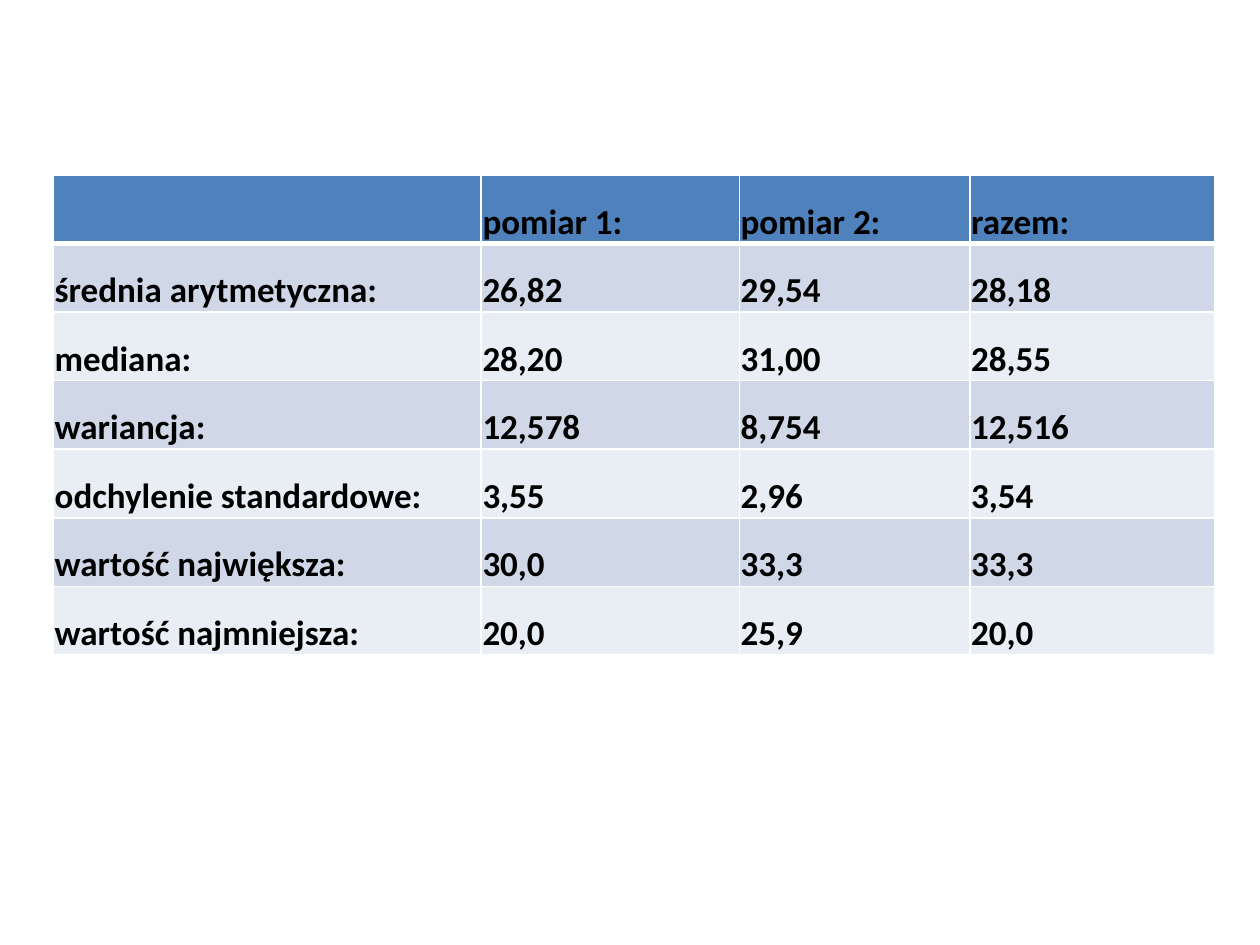
from lxml import etree
from pptx import Presentation
from pptx import util as u
from pptx.dml.color import RGBColor
from pptx.enum import text
from pptx.oxml.ns import qn

COLORS = {
    "header": "4F81BD",
    "odd": "D0D8E8",
    "even": "E9EDF4",
    "border": "FFFFFF",
    "text": "000000",
}

ROWS = [
    ["", "pomiar 1:", "pomiar 2:", "razem:"],
    ["średnia arytmetyczna:", "26,82", "29,54", "28,18"],
    ["mediana:", "28,20", "31,00", "28,55"],
    ["wariancja:", "12,578", "8,754", "12,516"],
    ["odchylenie standardowe:", "3,55", "2,96", "3,54"],
    ["wartość największa:", "30,0", "33,3", "33,3"],
    ["wartość najmniejsza:", "20,0", "25,9", "20,0"],
]
COLUMN_WIDTHS = [244.5, 147.5, 131.8, 140]
ROW_HEIGHT = 39.2


class SlideBuilder:
    font_format = {"name": "Calibri", "size": u.Pt(20), "bold": True}
    cell_format = {
        "margin_left": u.Pt(0.75),
        "margin_right": u.Pt(0.75),
        "margin_top": u.Pt(0.75),
        "margin_bottom": 0,
        "vertical_anchor": text.MSO_ANCHOR.BOTTOM,
    }

    def __init__(self, slide):
        self.slide = slide

    def apply(self, target, values):
        for name, value in values.items():
            setattr(target, name, value)

    def borders(self, cell, widths):
        """Put the border lines before the fill, in schema order."""
        properties = cell._tc.get_or_add_tcPr()
        for index, (side, width) in enumerate(widths.items()):
            line = etree.Element(qn(f"a:ln{side}"), w=str(u.Pt(width)))
            fill = etree.SubElement(line, qn("a:solidFill"))
            etree.SubElement(fill, qn("a:srgbClr"), val=COLORS["border"])
            properties.insert(index, line)

    def cell(self, cell, content, color, widths):
        self.apply(cell, self.cell_format)
        cell.fill.solid()
        cell.fill.fore_color.rgb = RGBColor.from_string(COLORS[color])
        self.borders(cell, widths)
        paragraph = cell.text_frame.paragraphs[0]
        self.apply(paragraph.font, self.font_format)
        if content:
            run = paragraph.add_run()
            run.text = content
            self.apply(run.font, self.font_format)
            run.font.color.rgb = RGBColor.from_string(COLORS["text"])

    def table(self, left, top, column_widths, row_height, rows):
        shape = self.slide.shapes.add_table(
            len(rows), len(column_widths), u.Pt(left), u.Pt(top),
            u.Pt(sum(column_widths)), u.Pt(row_height * len(rows)))
        table = shape.table
        for column, width in zip(table.columns, column_widths):
            column.width = u.Pt(width)
        for index, values in enumerate(rows):
            table.rows[index].height = u.Pt(row_height)
            color = "header" if index == 0 else ("even", "odd")[index % 2]
            # A thicker line separates the header from the body
            widths = {"L": 1, "R": 1, "T": 3 if index == 1 else 1,
                      "B": 3 if index == 0 else 1}
            for column, value in enumerate(values):
                self.cell(table.cell(index, column), value, color, widths)


def main():
    presentation = Presentation()
    presentation.slide_width = u.Pt(720)
    presentation.slide_height = u.Pt(540)

    # The slide has no title, so it uses the blank layout
    slide = presentation.slides.add_slide(presentation.slide_layouts[6])

    # Table of statistics
    SlideBuilder(slide).table(30.5, 100, COLUMN_WIDTHS, ROW_HEIGHT, ROWS)

    presentation.save("out.pptx")


if __name__ == "__main__":
    main()
